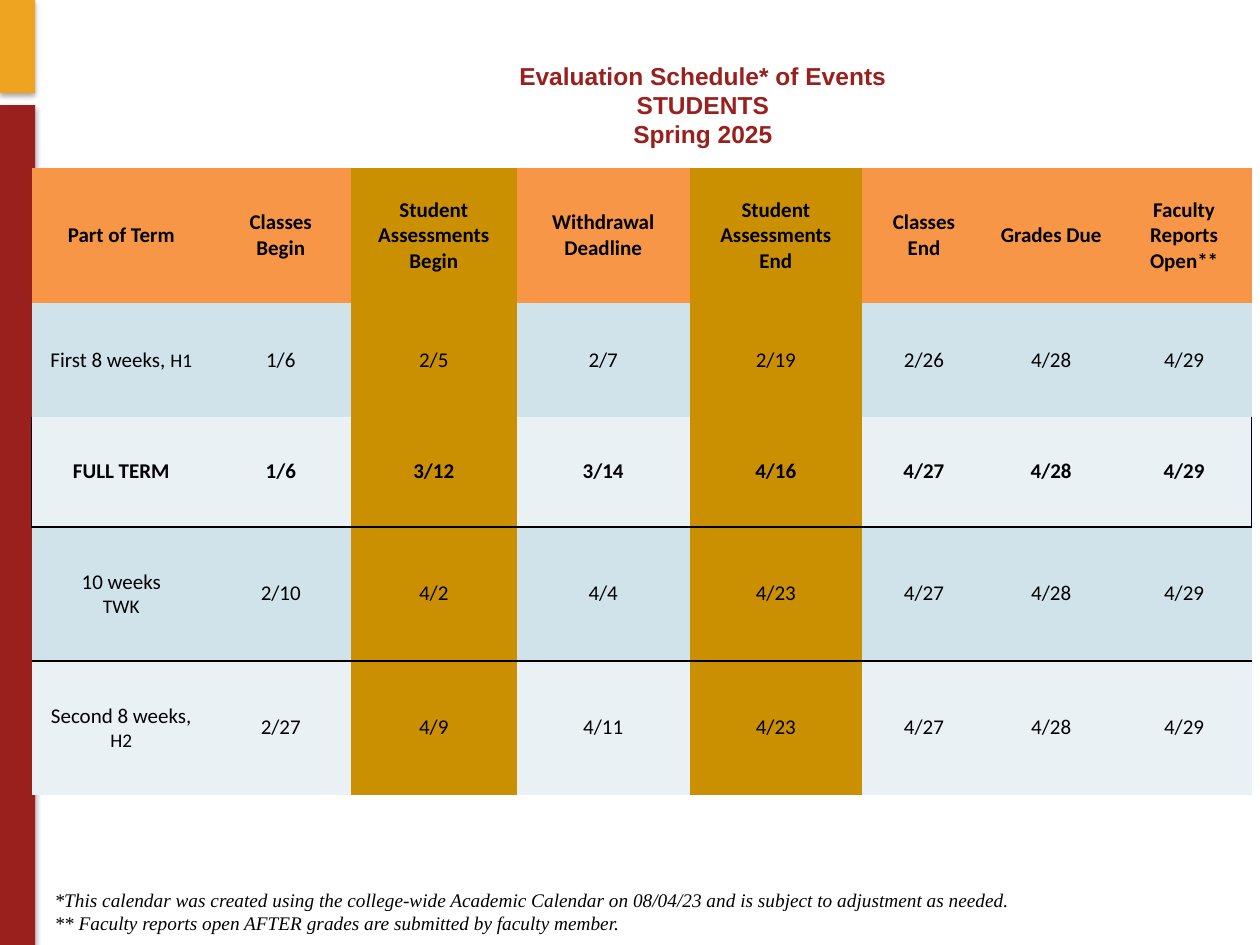
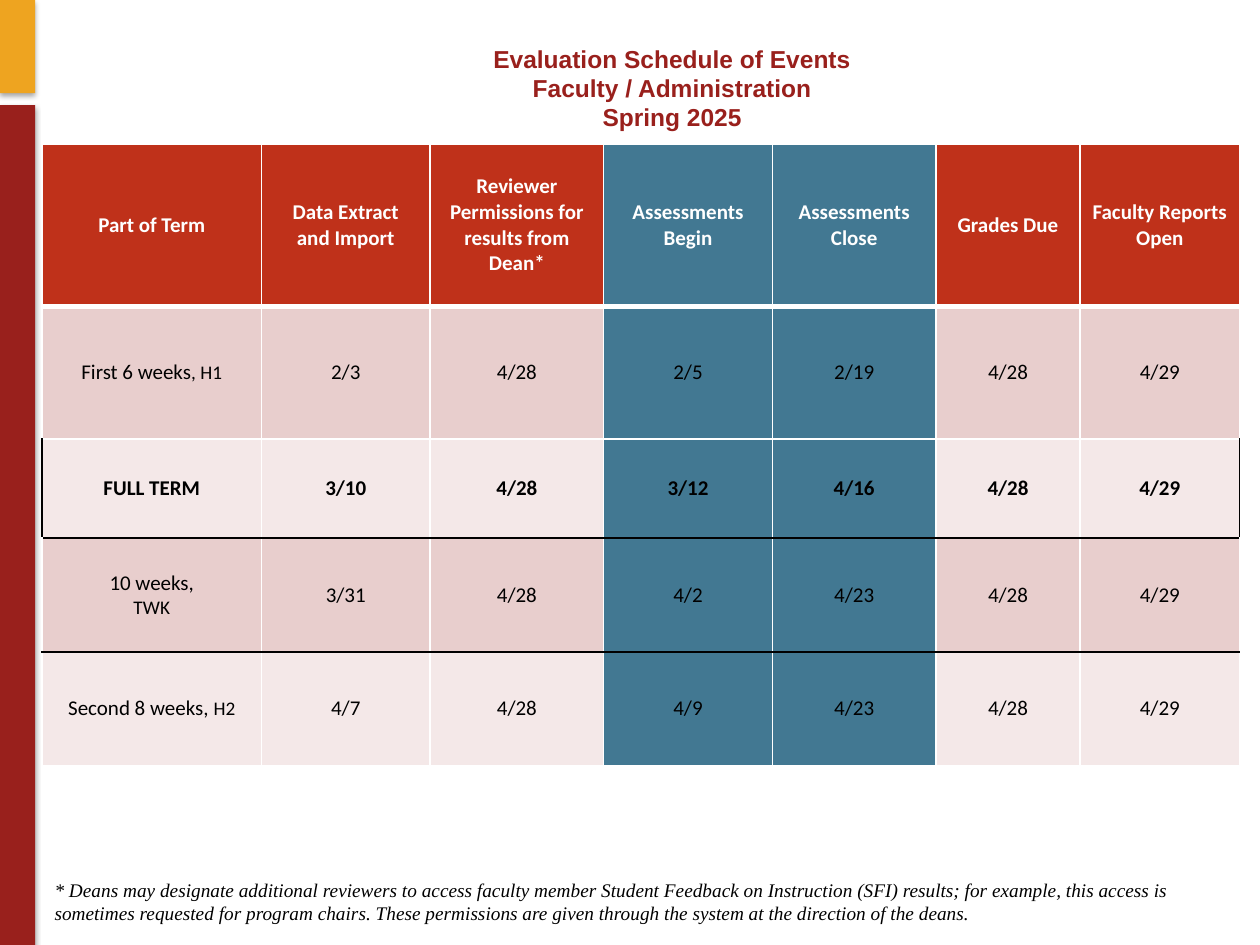
from lxml.etree import SubElement
from pptx import Presentation
from pptx.dml.color import RGBColor
from pptx.enum.shapes import MSO_SHAPE
from pptx.enum.text import MSO_ANCHOR, MSO_AUTO_SIZE, PP_ALIGN
from pptx.oxml import parse_xml
from pptx.oxml.ns import nsdecls, qn
from pptx.util import Cm, Pt

COLORS = {
    "red": "99201C", "gold": "EEA420", "black": "000000", "white": "FFFFFF",
    "orange": "F79646", "ochre": "CA9002", "sky": "D0E3EA", "ice": "E9F1F5",
    "brick": "BF311A", "teal": "427892", "rose": "E8CECD", "blush": "F4E8E8",
}
PLAIN_TABLE_STYLE = "{2D5ABB26-0587-4C30-8999-92F81FD0307C}"
FULL_TERM_ROW = 2
RULED_ROWS = (2, 3)

STUDENTS = {
    "title": ["Evaluation Schedule* of Events", "STUDENTS", "Spring 2025"],
    "title_at": (4.01, 0.84, 20.32, 2.54),
    "table_at": (0.64, 3.39),
    "widths": [3.61, 2.82, 3.35, 3.48, 3.48, 2.49, 2.64, 2.72],
    "heights": [2.72, 2.29, 2.22, 2.7, 2.7],
    "rows": [
        ["Part of Term", "Classes Begin", "Student\nAssessments Begin", "Withdrawal Deadline",
         "Student\nAssessments End", "Classes\nEnd", "Grades Due", "Faculty Reports Open**"],
        ["First 8 weeks, |H1", "1/6", "2/5", "2/7", "2/19", "2/26", "4/28", "4/29"],
        ["FULL TERM", "1/6", "3/12", "3/14", "4/16", "4/27", "4/28", "4/29"],
        ["10 weeks\n|TWK", "2/10", "4/2", "4/4", "4/23", "4/27", "4/28", "4/29"],
        ["Second 8 weeks,\n|H2", "2/27", "4/9", "4/11", "4/23", "4/27", "4/28", "4/29"],
    ],
    "header": "orange", "header_text": "black", "accent": "ochre",
    "accent_columns": (2, 4), "bands": ("sky", "ice"), "grid": None,
    "notes_top": 17.78,
    "notes": [
        "*This calendar was created using the college-wide Academic Calendar on 08/04/23 "
        "and is subject to adjustment as needed.",
        "** Faculty reports open AFTER grades are submitted by faculty member.",
    ],
}
FACULTY = {
    "title": ["Evaluation Schedule of Events", "Faculty / Administration", "Spring 2025"],
    "title_at": (3.39, 0.64, 20.32, 2.26),
    "table_at": (0.85, 2.9),
    "widths": [4.42, 3.4, 3.5, 3.4, 3.3, 2.9, 3.22],
    "heights": [3.28, 2.67, 2, 2.29, 2.29],
    "rows": [
        ["Part of Term", "Data Extract and Import", "Reviewer Permissions for results from Dean*",
         "Assessments Begin", "Assessments Close", "Grades Due", "Faculty Reports Open"],
        ["First 6 weeks|, H1", "2/3", "4/28", "2/5", "2/19", "4/28", "4/29"],
        ["FULL TERM", "3/10", "4/28", "3/12", "4/16", "4/28", "4/29"],
        ["10 weeks,\n|TWK", "3/31", "4/28", "4/2", "4/23", "4/28", "4/29"],
        ["Second 8 weeks, |H2", "4/7", "4/28", "4/9", "4/23", "4/28", "4/29"],
    ],
    "header": "brick", "header_text": "white", "accent": "teal",
    "accent_columns": (3, 4), "bands": ("rose", "blush"), "grid": "white",
    "notes_top": 17.58,
    "notes": [
        "* Deans may designate additional reviewers to access faculty member Student Feedback "
        "on Instruction (SFI) results; for example, this access is sometimes requested for "
        "program chairs. These permissions are given through the system at the direction of "
        "the deans.",
    ],
}


def rgb(name):
    """Return the named colour."""
    return RGBColor.from_string(COLORS[name])


def style_font(font, name, size, color, bold=False, italic=False):
    """Format a font."""
    font.name, font.size = name, Pt(size)
    font.bold, font.italic = bold, italic
    font.color.rgb = rgb(color)


def add_master_bar(deck, page, top, height, color, number):
    """Put a shadowed bar on the left edge of the slide master."""
    bar = page.shapes.add_shape(MSO_SHAPE.RECTANGLE, 0, Cm(top), Cm(0.71), Cm(height))
    bar.fill.solid()
    bar.fill.fore_color.rgb = rgb(color)
    bar.line.fill.background()
    bar.element.spPr.append(parse_xml(
        f'<a:effectLst {nsdecls("a")}><a:outerShdw blurRad="40000" dist="23000" dir="5400000" '
        f'rotWithShape="0"><a:srgbClr val="{COLORS["black"]}"><a:alpha val="35000"/>'
        '</a:srgbClr></a:outerShdw></a:effectLst>'))
    bar.element.nvSpPr.cNvPr.set("id", str(number))
    deck.slide_master.shapes.element.insert(2, bar.element)


def add_title(page, lines, place):
    """Fill and place the title."""
    title = page.shapes.title
    title.left, title.top, title.width, title.height = map(Cm, place)
    frame = title.text_frame
    frame.text = "\v".join(lines)
    frame.auto_size = MSO_AUTO_SIZE.NONE
    frame.vertical_anchor = MSO_ANCHOR.MIDDLE
    para = frame.paragraphs[0]
    para.alignment = PP_ALIGN.CENTER
    for span in para.runs:
        style_font(span.font, "Arial", 14, "red", bold=True)


def cell_borders(row, column, last_column, grid):
    """Work out the border of each side as a colour and a width."""
    sides = {side: (grid, 1) for side in "LRTB"} if grid else {}
    if row == 0 and grid:
        sides["B"] = (grid, 3)
    if row == 1 and grid:
        sides["T"] = (grid, 3)
    if row in RULED_ROWS:
        sides["B"] = ("black", 1)
    if row - 1 in RULED_ROWS:
        sides["T"] = ("black", 1)
    if row == FULL_TERM_ROW and column == 0:
        sides["L"] = ("black", 1)
    if row == FULL_TERM_ROW and column == last_column:
        sides["R"] = ("black", 1)
    return sides


def draw_borders(cell, sides):
    """Draw the borders of a cell."""
    properties = cell._tc.get_or_add_tcPr()
    for side in "LRTB":
        if side in sides:
            color, width = sides[side]
            line = SubElement(properties, qn(f"a:ln{side}"), w=str(Pt(width)))
            fill = SubElement(line, qn("a:solidFill"))
            SubElement(fill, qn("a:srgbClr"), val=COLORS[color])


def fill_cell(cell, text, fill, color, bold):
    """Write centred text, with the part after a bar smaller, on a filled cell."""
    cell.fill.solid()
    cell.fill.fore_color.rgb = rgb(fill)
    cell.vertical_anchor = MSO_ANCHOR.MIDDLE
    frame = cell.text_frame
    for number, line in enumerate(text.split("\n")):
        para = frame.add_paragraph() if number else frame.paragraphs[0]
        para.alignment = PP_ALIGN.CENTER
        for part, size in zip(line.split("|"), (12, 11)):
            if part:
                span = para.add_run()
                span.text = part
                style_font(span.font, "Calibri", size, color, bold)


def add_schedule(page, schedule):
    """Add the table of dates."""
    rows, widths, heights = schedule["rows"], schedule["widths"], schedule["heights"]
    left, top = schedule["table_at"]
    table = page.shapes.add_table(len(rows), len(widths), Cm(left), Cm(top),
                                  Cm(sum(widths)), Cm(sum(heights))).table
    table._tbl.tblPr.find(qn("a:tableStyleId")).text = PLAIN_TABLE_STYLE
    for column, width in zip(table.columns, widths):
        column.width = Cm(width)
    for row, height in zip(table.rows, heights):
        row.height = Cm(height)
    for y, texts in enumerate(rows):
        band = schedule["bands"][(y - 1) % 2] if y else schedule["header"]
        color = "black" if y else schedule["header_text"]
        for x, text in enumerate(texts):
            cell = table.cell(y, x)
            draw_borders(cell, cell_borders(y, x, len(widths) - 1, schedule["grid"]))
            fill = schedule["accent"] if x in schedule["accent_columns"] else band
            fill_cell(cell, text, fill, color, bold=y in (0, FULL_TERM_ROW))


def add_notes(page, lines, top):
    """Add the footnotes below the table."""
    box = page.shapes.add_textbox(Cm(0.85), Cm(top), Cm(24.13), Cm(1.19))
    frame = box.text_frame
    frame.word_wrap = True
    frame.auto_size = MSO_AUTO_SIZE.SHAPE_TO_FIT_TEXT
    frame.text = "\n".join(lines)
    for para in frame.paragraphs:
        for span in para.runs:
            style_font(span.font, "Times New Roman", 11, "black", italic=True)


def main():
    """Build the deck."""
    deck = Presentation()
    deck.slide_width, deck.slide_height = Cm(25.4), Cm(19.05)
    for schedule in (STUDENTS, FACULTY):
        page = deck.slides.add_slide(deck.slide_layouts[5])
        add_title(page, schedule["title"], schedule["title_at"])
        add_schedule(page, schedule)
        add_notes(page, schedule["notes"], schedule["notes_top"])
    add_master_bar(deck, page, 0, 1.88, "gold", 101)
    add_master_bar(deck, page, 2.12, 16.93, "red", 102)
    deck.save("out.pptx")


if __name__ == "__main__":
    main()
